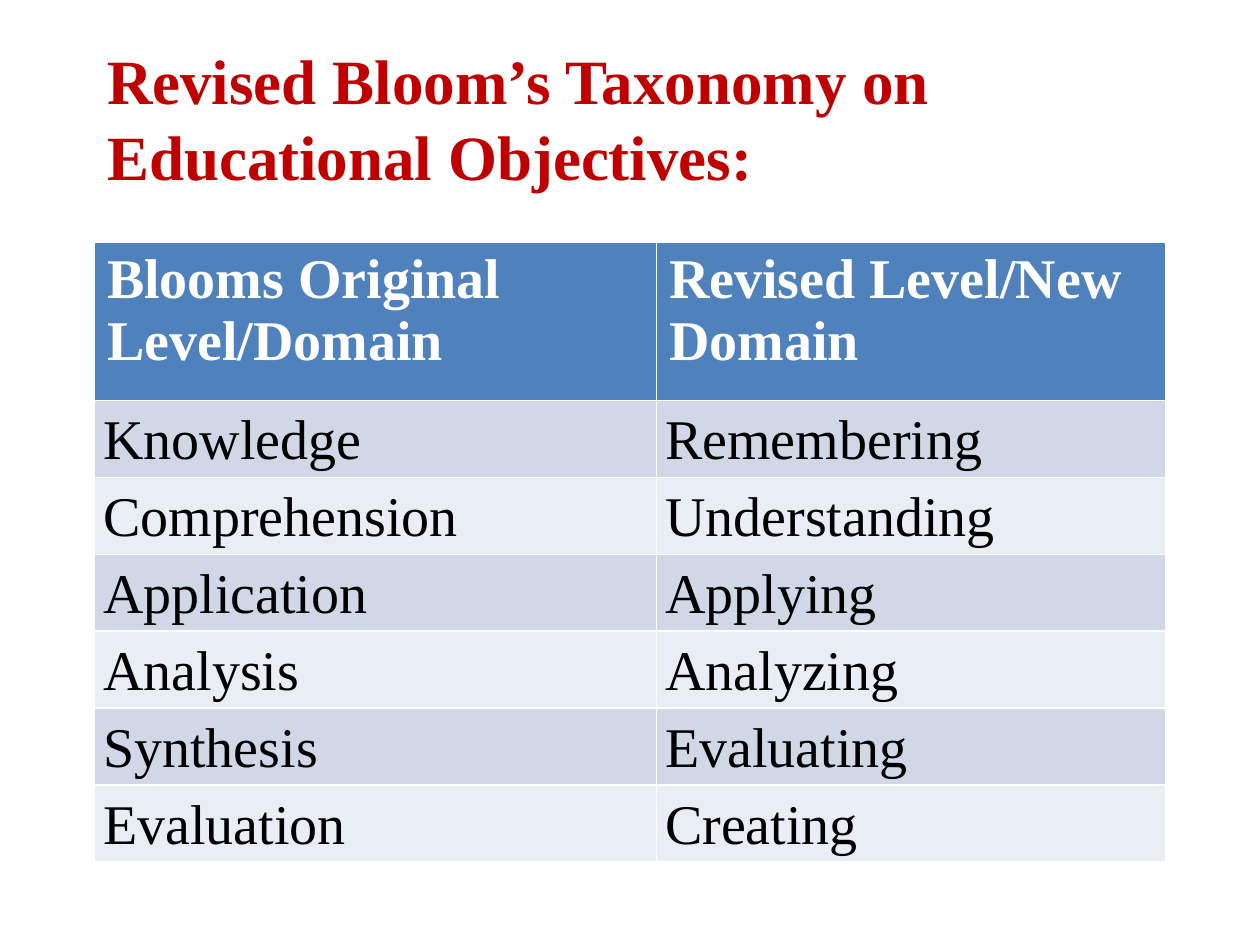
from pptx import Presentation
from pptx.dml.color import RGBColor
from pptx.enum.text import MSO_ANCHOR, PP_ALIGN
from pptx.util import Inches, Pt

RED = RGBColor(0xC0, 0x00, 0x00)
WHITE = RGBColor(0xFF, 0xFF, 0xFF)
BLACK = RGBColor(0x00, 0x00, 0x00)
BLUE = RGBColor(0x4F, 0x81, 0xBD)
BANDS = [RGBColor(0xE9, 0xED, 0xF4), RGBColor(0xD0, 0xD8, 0xE8)]

LEVELS = [
    ("Blooms Original Level/Domain", "Revised Level/New Domain"),
    ("Knowledge", "Remembering"),
    ("Comprehension", "Understanding"),
    ("Application", "Applying"),
    ("Analysis", "Analyzing"),
    ("Synthesis", "Evaluating"),
    ("Evaluation", "Creating"),
]


def write(p, text, size, color, bold):
    r = p.add_run()
    r.text = text
    font = {"name": "Times New Roman", "size": Pt(size), "bold": bold}
    for name, value in font.items():
        setattr(r.font, name, value)
    r.font.color.rgb = color


prs = Presentation()
prs.slide_width, prs.slide_height = Inches(10), Inches(7.5)
s = prs.slides.add_slide(prs.slide_layouts[0])

# Heading in the subtitle placeholder; the title is not needed
title = s.shapes.title.element
title.getparent().remove(title)
sp = s.placeholders[1]
box = {"left": 0.75, "top": 0.28, "width": 8.58, "height": 6.56}
for name, value in box.items():
    setattr(sp, name, Inches(value))
tf = sp.text_frame
tf.vertical_anchor = MSO_ANCHOR.TOP
p = tf.paragraphs[0]
p.alignment = PP_ALIGN.LEFT
write(p, "Revised Bloom’s Taxonomy on Educational Objectives:", 36, RED, True)

# Table of original and revised levels
table = s.shapes.add_table(len(LEVELS), 2, Inches(0.75), Inches(1.92),
                           Inches(8.5), Inches(4.92)).table
for col, width in zip(table.columns, (4.46, 4.04)):
    col.width = Inches(width)

margins = {"margin_left": 0.07, "margin_top": 0,
           "margin_right": 0.07, "margin_bottom": 0}
for i, row in enumerate(LEVELS):
    header = i == 0
    table.rows[i].height = Inches(1.26 if header else 0.61)
    for j, text in enumerate(row):
        cell = table.cell(i, j)
        cell.fill.solid()
        cell.fill.fore_color.rgb = BLUE if header else BANDS[i % 2]
        p = cell.text_frame.paragraphs[0]
        if not header:
            p.line_spacing = 1.15
            for name, value in margins.items():
                setattr(cell, name, Inches(value))
        write(p, text, 32, WHITE if header else BLACK, header)

prs.save("out.pptx")
